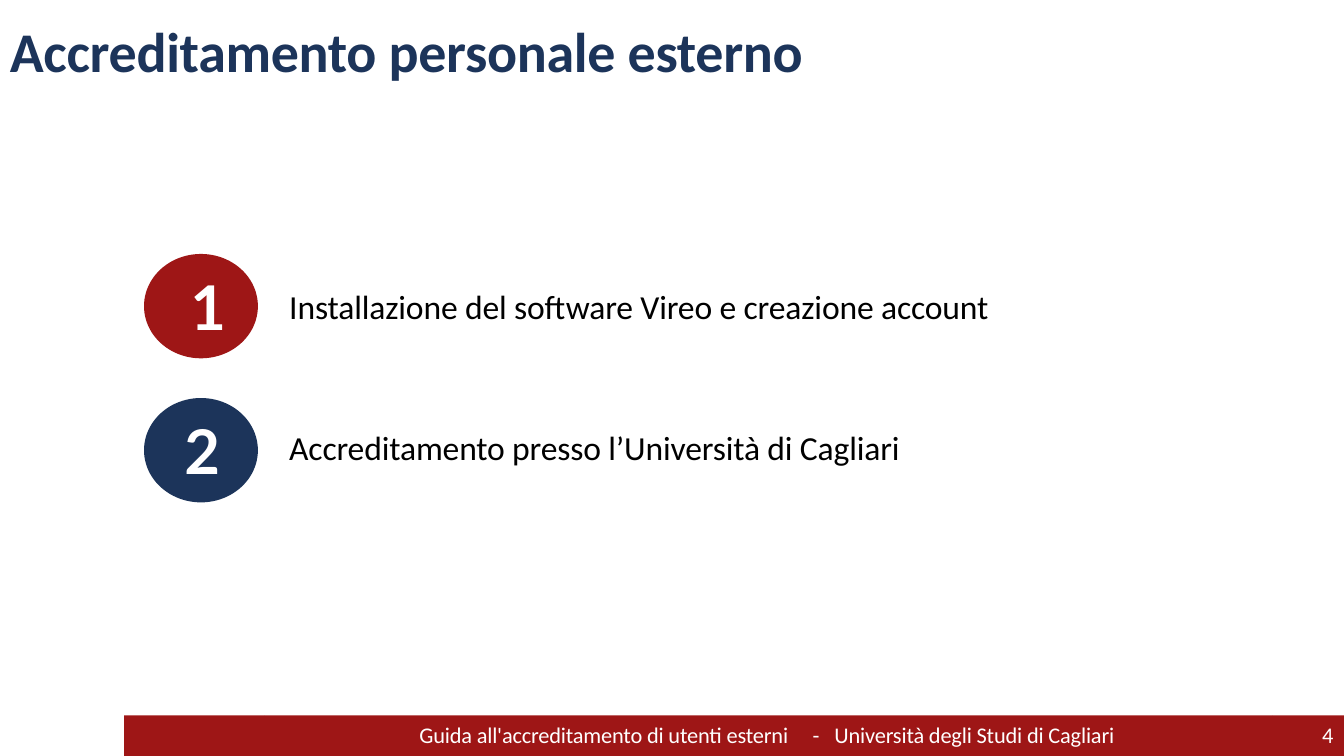
import pptx
import pptx.util
import pptx.dml.color
import pptx.enum.shapes
import pptx.oxml
import pptx.oxml.ns
from pptx.util import Cm

RED = "9E1616"
NAVY = "1C345A"
WHITE = "FFFFFF"
BLACK = "000000"

deck = pptx.Presentation()
deck.slide_width = Cm(33.87)
deck.slide_height = Cm(19.05)
page = deck.slides.add_slide(deck.slide_layouts[6])


def add_filled(kind, left, top, width, height, color):
    shape = page.shapes.add_shape(kind, Cm(left), Cm(top), Cm(width), Cm(height))
    shape.shadow.inherit = False
    shape.fill.solid()
    shape.fill.fore_color.rgb = pptx.dml.color.RGBColor.from_string(color)
    shape.line.fill.background()


def add_label(text, left, top, width, height, size, color, font="Calibri", bold=False, spacing=-10):
    box = page.shapes.add_textbox(Cm(left), Cm(top), Cm(width), Cm(height))
    frame = box.text_frame
    frame.margin_left = frame.margin_top = frame.margin_right = frame.margin_bottom = 0
    frame.word_wrap = True
    para = frame.paragraphs[0]
    para.text = text
    for span in para.runs:
        span.font.name = font
        span.font.size = pptx.util.Pt(size)
        span.font.bold = bold
        span.font.color.rgb = pptx.dml.color.RGBColor.from_string(color)
        span._r.get_or_add_rPr().set("spc", str(spacing))
    return para


add_label("Accreditamento personale esterno", 0.25, 0.41, 20.5, 1.8, 40, NAVY, bold=True, spacing=-20)

rectangle = pptx.enum.shapes.MSO_SHAPE.RECTANGLE
footer_edges = [3.13, 6.66, 32.08, 33.87]
for left, right in zip(footer_edges, footer_edges[1:]):
    add_filled(rectangle, left, 18.03, right - left, 1.02, RED)

steps = [
    ("1", RED, 6.4, 4.8, 7.21, "Installazione del software Vireo e creazione account"),
    ("2", NAVY, 10.03, 4.65, 10.77, "Accreditamento presso l’Università di Cagliari"),
]
for number, color, top, number_left, text_top, text in steps:
    add_filled(pptx.enum.shapes.MSO_SHAPE.OVAL, 3.63, top, 2.87, 2.63, color)
    add_label(number, number_left, top + 0.37, 1, 1.9, 44, WHITE, font="Lato", bold=True, spacing=0)
    add_label(text, 7.29, text_top, 19, 1.09, 24, BLACK)

footer = add_label(
    "Guida all'accreditamento di utenti esterni\t-\tUniversità degli Studi di Cagliari",
    10.57, 18.29, 18, 0.64, 16, WHITE)
page_number = add_label("4", 33.32, 18.29, 0.5, 0.64, 16, WHITE)
for para in (footer, page_number):
    para.line_spacing = pptx.util.Pt(16.1)

tab_list = pptx.oxml.parse_xml(f'<a:tabLst {pptx.oxml.ns.nsdecls("a")}/>')
for position in (9.91, 10.46):
    tab = tab_list.makeelement(pptx.oxml.ns.qn("a:tab"), {"pos": str(Cm(position)), "algn": "l"})
    tab_list.append(tab)
footer._p.get_or_add_pPr().append(tab_list)

deck.save("out.pptx")
